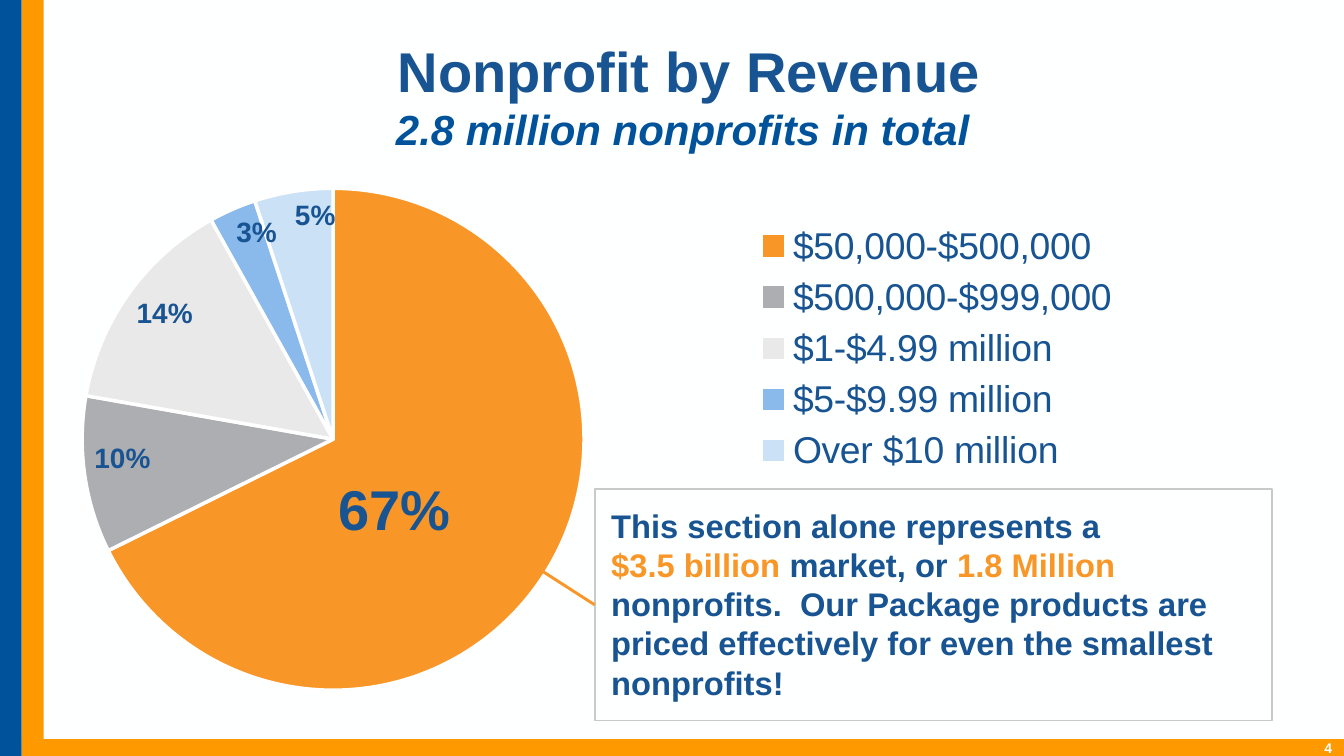
"""Build the slide showing nonprofits by revenue as a pie chart."""
from lxml import etree
from pptx import Presentation
from pptx.chart.data import CategoryChartData
from pptx.dml.color import RGBColor
from pptx.enum import chart as charts, shapes, text
from pptx.oxml import parse_xml
from pptx.oxml.ns import nsdecls, qn
from pptx.util import Inches, Pt

NAVY = RGBColor(0x18, 0x53, 0x92)
BLUE = RGBColor(0x00, 0x53, 0x9B)
AMBER = RGBColor(0xFF, 0x99, 0x00)
ORANGE = RGBColor(0xF8, 0x97, 0x28)
GRAY = RGBColor(0xAC, 0xAE, 0xB2)
PALE_GRAY = RGBColor(0xE9, 0xE9, 0xE9)
SKY = RGBColor(0x8A, 0xB9, 0xEC)
PALE_SKY = RGBColor(0xCB, 0xE1, 0xF5)
BORDER = RGBColor(0xC8, 0xC9, 0xC8)
OFF_WHITE = RGBColor(0xFE, 0xFF, 0xFF)
WHITE = RGBColor(0xFF, 0xFF, 0xFF)


def style_font(font, size, color, bold=True, italic=False):
    font.name = "Arial"
    font.size = Pt(size)
    font.color.rgb = color
    font.bold = bold
    font.italic = italic


def make_layout(x, y, width=None, height=None, inner=False):
    modes = '<c:xMode val="edge"/><c:yMode val="edge"/>' if width else ""
    target = '<c:layoutTarget val="inner"/>' if inner else ""
    size = f'<c:w val="{width}"/><c:h val="{height}"/>' if width else ""
    return parse_xml(
        f'<c:layout {nsdecls("c")}><c:manualLayout>{target}{modes}'
        f'<c:x val="{x}"/><c:y val="{y}"/>{size}</c:manualLayout></c:layout>'
    )


presentation = Presentation()
presentation.slide_width = Inches(8)
presentation.slide_height = Inches(4.5)
slide = presentation.slides.add_slide(presentation.slide_layouts[6])
slide.background.fill.solid()
slide.background.fill.fore_color.rgb = OFF_WHITE

for left, top, width, height, color in (
    (0.13, 4.4, 7.87, 0.1, AMBER),
    (0, 0, 0.13, 4.5, BLUE),
    (0.13, 0, 0.13, 4.5, AMBER),
):
    bar = slide.shapes.add_shape(
        shapes.MSO_SHAPE.RECTANGLE, Inches(left), Inches(top), Inches(width), Inches(height)
    )
    bar.shadow.inherit = False
    bar.fill.solid()
    bar.fill.fore_color.rgb = color
    bar.line.fill.background()

page_number = slide.shapes.add_textbox(Inches(7.61), Inches(3.9), Inches(0.32), Inches(0.6))
frame = page_number.text_frame
frame.word_wrap = True
frame.vertical_anchor = text.MSO_ANCHOR.BOTTOM
frame.margin_left = frame.margin_right = frame.margin_top = frame.margin_bottom = 0
frame.text = "4"
frame.paragraphs[0].alignment = text.PP_ALIGN.RIGHT
style_font(frame.paragraphs[0].runs[0].font, 6, WHITE)

revenue_bands = (
    ("$50,000-$500,000", 67, ORANGE),
    ("$500,000-$999,000", 10, GRAY),
    ("$1-$4.99 million ", 14, PALE_GRAY),
    ("$5-$9.99 million", 3, SKY),
    ("Over $10 million", 5, PALE_SKY),
)
chart_data = CategoryChartData()
chart_data.categories = [band for band, share, color in revenue_bands]
chart_data.add_series("Series 1", [share for band, share, color in revenue_bands])
chart = slide.shapes.add_chart(
    charts.XL_CHART_TYPE.PIE, Inches(0.07), Inches(0.75), Inches(6.76), Inches(3.53), chart_data
).chart
style_font(chart.font, 10, NAVY, bold=False)
chart.has_title = False
chart.has_legend = True
legend = chart.legend
legend.position = charts.XL_LEGEND_POSITION.RIGHT
legend.include_in_layout = False
style_font(legend.font, 16, NAVY, bold=False)
legend_element = legend._element
for old_layout in legend_element.findall(qn("c:layout")):
    legend_element.remove(old_layout)
legend_element.find(qn("c:legendPos")).addnext(make_layout(0.64, 0.15, 0.35, 0.45))

plot = chart.plots[0]
plot.vary_by_categories = True
plot_area = plot._element.getparent()
for old_layout in plot_area.findall(qn("c:layout")):
    plot_area.remove(old_layout)
plot_area.insert(0, make_layout(0.062, 0.105, 0.442, 0.847, inner=True))

series = plot.series[0]
for index, (band, share, color) in enumerate(revenue_bands):
    wedge = series.points[index].format
    wedge.fill.solid()
    wedge.fill.fore_color.rgb = color
    wedge.line.color.rgb = WHITE
    wedge.line.width = Pt(1.5)

labels = series.data_labels
labels.show_value = True
labels.number_format = '0"%"'
labels.number_format_is_linked = False
labels.position = charts.XL_LABEL_POSITION.INSIDE_END
style_font(labels.font, 12, NAVY)

largest_label = series.points[0].data_label
style_font(largest_label.font, 24, NAVY)
largest_label.position = charts.XL_LABEL_POSITION.CENTER
label_element = labels._element.find(qn("c:dLbl"))
label_index = label_element.find(qn("c:idx"))
number_format = etree.Element(qn("c:numFmt"), formatCode='0"%"', sourceLinked="0")
label_index.addnext(number_format)
label_index.addnext(make_layout(-0.04, 0.01))

callout = slide.shapes.add_shape(
    shapes.MSO_SHAPE.RECTANGLE, Inches(3.54), Inches(2.91), Inches(4.03), Inches(1.38)
)
callout.shadow.inherit = False
callout.fill.solid()
callout.fill.fore_color.rgb = OFF_WHITE
callout.line.color.rgb = BORDER
callout.line.width = Pt(0.75)
frame = callout.text_frame
frame.word_wrap = True
frame.vertical_anchor = text.MSO_ANCHOR.TOP
frame.margin_left = frame.margin_right = frame.margin_top = frame.margin_bottom = Inches(0.1)
frame.text = "This section alone represents a"
style_font(frame.paragraphs[0].runs[0].font, 14, NAVY)
market = frame.add_paragraph()
for words, color in (
    ("$3.5 billion ", ORANGE),
    ("market, or ", NAVY),
    ("1.8 Million ", ORANGE),
    ("nonprofits.  Our Package products are priced effectively for even the smallest nonprofits!", NAVY),
):
    run = market.add_run()
    run.text = words
    style_font(run.font, 14, color)
for paragraph in frame.paragraphs:
    paragraph.alignment = text.PP_ALIGN.LEFT

leader = slide.shapes.add_connector(
    shapes.MSO_CONNECTOR.STRAIGHT, Inches(2.59), Inches(2.99), Inches(3.54), Inches(3.6)
)
leader.end_connect(callout, 1)
leader.line.color.rgb = ORANGE
leader.line.width = Pt(1.25)
etree.SubElement(leader._element.spPr, qn("a:effectLst"))

title = slide.shapes.add_textbox(Inches(0.41), Inches(0.24), Inches(7.38), Inches(0.65))
frame = title.text_frame
frame.word_wrap = True
frame.vertical_anchor = text.MSO_ANCHOR.MIDDLE
frame.margin_left = frame.margin_right = Inches(0.07)
frame.margin_top = frame.margin_bottom = Inches(0.04)
frame.text = "Nonprofit by Revenue\n2.8 million nonprofits in total "
heading, subheading = frame.paragraphs
heading.alignment = subheading.alignment = text.PP_ALIGN.CENTER
style_font(heading.runs[0].font, 24, NAVY)
style_font(subheading.runs[0].font, 18, BLUE, italic=True)

presentation.save("out.pptx")
